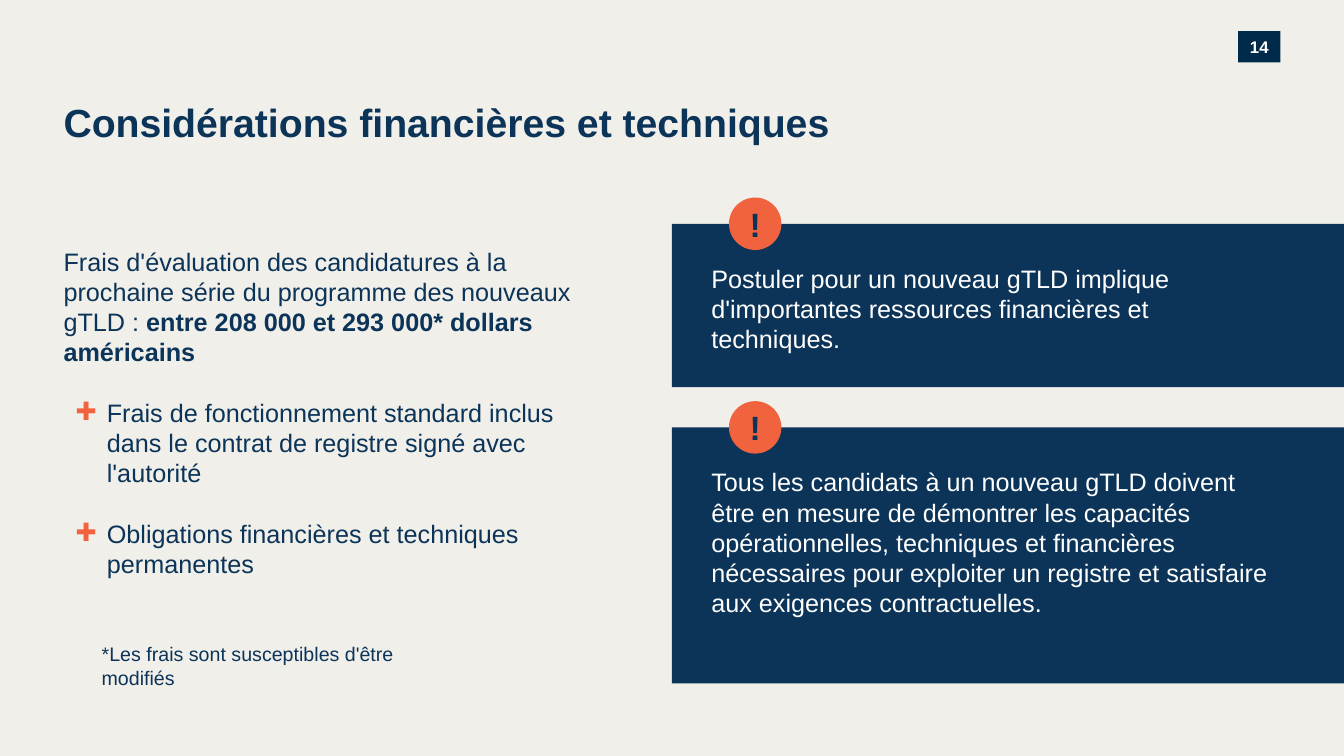
"""Build the slide on the financial and technical considerations of a new gTLD."""
import pptx
import pptx.util
import pptx.dml.color
import pptx.enum.shapes
import pptx.enum.text
import lxml.etree

Inches, Pt = pptx.util.Inches, pptx.util.Pt
Kind = pptx.enum.shapes.MSO_SHAPE
Align = pptx.enum.text.PP_ALIGN
Anchor = pptx.enum.text.MSO_ANCHOR
HUES = {"paper": "F1EFEA", "navy": "0B3458", "dark": "002A49",
        "coral": "F1633E", "white": "FFFFFF"}
WIDE, HIGH = 13.33, 7.5
LEFT, HALF = 0.63, WIDE / 2
DOT = 0.52
LINE = Pt(21.6)


def hue(name):
    return pptx.dml.color.RGBColor.from_string(HUES[name])


def style(par, size, color, bold=False):
    font = par.font
    font.name, font.size, font.bold = "Arial", Pt(size), bold
    font.color.rgb = hue(color)


deck = pptx.Presentation()
deck.slide_width, deck.slide_height = Inches(WIDE), Inches(HIGH)
slide = deck.slides.add_slide(deck.slide_layouts[5])
slide.background.fill.solid()
slide.background.fill.fore_color.rgb = hue("paper")
shapes = slide.shapes

title = shapes.title
title.left, title.top = Inches(LEFT), Inches(0.98)
title.width, title.height = Inches(9.59), Inches(1.09)
frame = title.text_frame
frame.text = "Considérations financières et techniques"
frame.vertical_anchor = Anchor.TOP
frame.auto_size = pptx.enum.text.MSO_AUTO_SIZE.NONE
frame.margin_left = frame.margin_top = frame.margin_right = frame.margin_bottom = 0
frame.paragraphs[0].alignment = Align.LEFT
style(frame.paragraphs[0], 28, "navy", True)

fees = shapes.add_textbox(Inches(LEFT), Inches(2.44), Inches(5.11), Inches(4.26))
frame = fees.text_frame
frame.word_wrap = True
frame.margin_left = frame.margin_top = frame.margin_right = frame.margin_bottom = 0
intro = frame.paragraphs[0]
intro.line_spacing = LINE
style(intro, 18, "navy")
intro.add_run().text = ("Frais d'évaluation des candidatures à la prochaine série "
                        "du programme des nouveaux gTLD : ")
cost = intro.add_run()
cost.text = "entre 208 000 et 293 000* dollars américains"
cost.font.bold = True
for text in ("Frais de fonctionnement standard inclus dans le contrat "
             "de registre signé avec l'autorité",
             "Obligations financières et techniques permanentes"):
    item = frame.add_paragraph()
    item.text = text
    item.line_spacing = item.space_before = LINE
    props = item._p.get_or_add_pPr()
    props.set("marL", str(Inches(0.43)))
    props.set("indent", str(Inches(-0.31)))
    space = pptx.oxml.ns.qn
    tint = lxml.etree.SubElement(props, space("a:buClr"))
    lxml.etree.SubElement(tint, space("a:srgbClr"), val=HUES["coral"])
    lxml.etree.SubElement(props, space("a:buFont"), typeface="Arial")
    lxml.etree.SubElement(props, space("a:buChar"), char="✚")
    style(item, 18, "navy")

panels = [
    (2.22, 1.62, "Postuler pour un nouveau gTLD implique d'importantes "
     "ressources financières et techniques."),
    (4.24, 2.54, "Tous les candidats à un nouveau gTLD doivent être en mesure de "
     "démontrer les capacités opérationnelles, techniques et financières "
     "nécessaires pour exploiter un registre et satisfaire aux exigences "
     "contractuelles."),
]
RECT, OVAL = Kind.RECTANGLE, Kind.OVAL
PAD, INSET, NONE = (0.39, 0.39, 0.67, 0.3), (0.1, 0.05, 0.1, 0.05), (0, 0, 0, 0)
parts = [(RECT, 12.28, 0.31, 0.42, 0.31, "dark", NONE, "14", 12, "white")]
for top, tall, text in panels:
    parts += [
        (RECT, HALF, top, HALF, tall, "navy", PAD, text, 18, "white"),
        (OVAL, 7.23, top - DOT / 2, DOT, DOT, "coral", INSET, "!", 24, "navy"),
    ]
for kind, left, top, width, tall, fill, pad, text, size, color in parts:
    shape = shapes.add_shape(kind, Inches(left), Inches(top), Inches(width), Inches(tall))
    shape.shadow.inherit = False
    shape.fill.solid()
    shape.fill.fore_color.rgb = hue(fill)
    shape.line.fill.background()
    frame = shape.text_frame
    frame.text = text
    frame.word_wrap = True
    (frame.margin_left, frame.margin_top,
     frame.margin_right, frame.margin_bottom) = map(Inches, pad)
    par = frame.paragraphs[0]
    panel = pad == PAD
    frame.vertical_anchor = Anchor.TOP if panel else Anchor.MIDDLE
    par.alignment = Align.LEFT if panel else Align.CENTER
    if panel:
        par.line_spacing = LINE
    style(par, size, color, not panel)

note = shapes.add_textbox(Inches(0.91), Inches(6.32), Inches(3.62), Inches(0.34))
note.text_frame.word_wrap = True
note.text_frame.auto_size = pptx.enum.text.MSO_AUTO_SIZE.SHAPE_TO_FIT_TEXT
note.text_frame.text = "*Les frais sont susceptibles d'être modifiés"
style(note.text_frame.paragraphs[0], 14, "navy")

deck.save("out.pptx")
